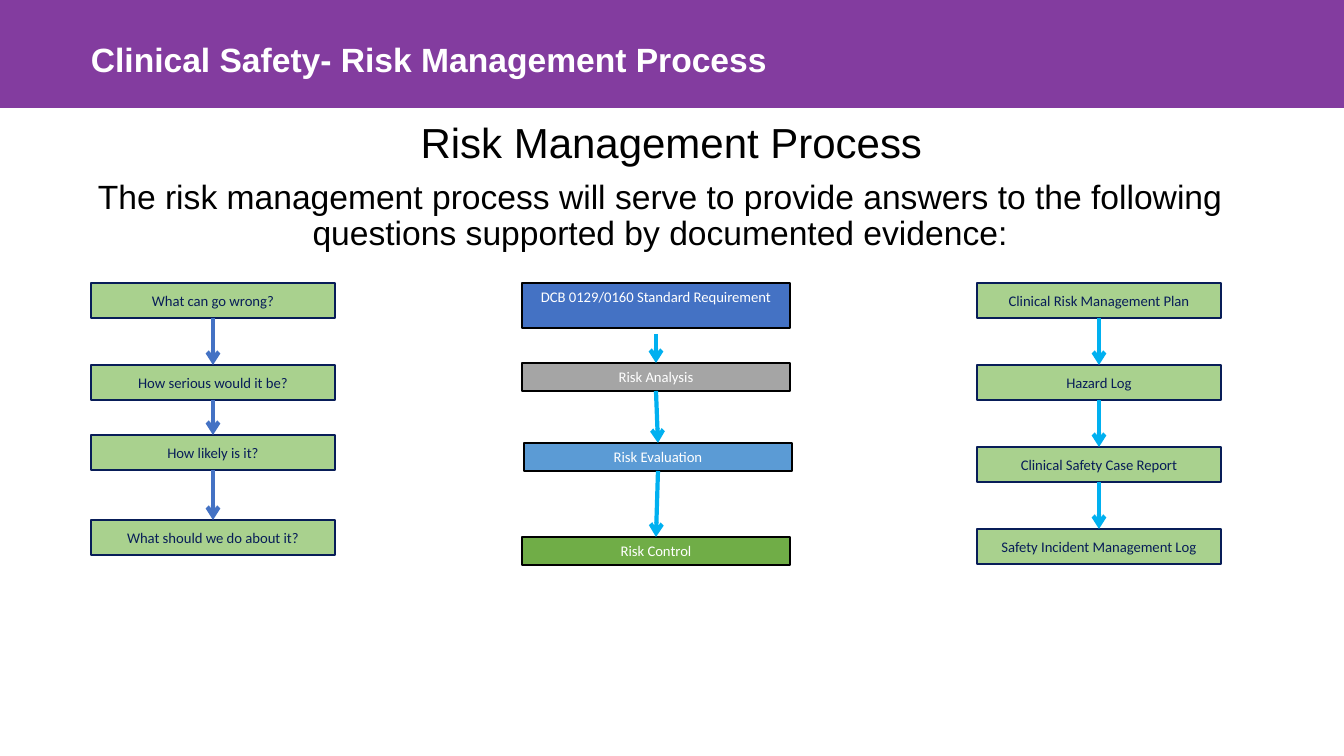
from lxml import etree
from pptx import Presentation
from pptx.dml.color import RGBColor
from pptx.enum.shapes import MSO_CONNECTOR, MSO_SHAPE
from pptx.enum.text import MSO_ANCHOR, MSO_AUTO_SIZE, PP_ALIGN
from pptx.oxml.ns import qn
from pptx.util import Pt

EMU_PER_PX = 914400 / 100.8
RECTANGLE = MSO_SHAPE.RECTANGLE
STRAIGHT = MSO_CONNECTOR.STRAIGHT
TOP, MIDDLE = MSO_ANCHOR.TOP, MSO_ANCHOR.MIDDLE
CENTER = PP_ALIGN.CENTER
NO_AUTOFIT, GROW = MSO_AUTO_SIZE.NONE, MSO_AUTO_SIZE.SHAPE_TO_FIT_TEXT
BOTTOM_SITE, TOP_SITE = 2, 0

WHITE, BLACK, NAVY = "FFFFFF", "000000", "081D58"
PURPLE, GREEN, BLUE, CYAN = "833C9F", "A9D18E", "4472C4", "00B0F0"


def px(*lengths):
    """Turn pixel lengths into a list of EMU."""
    return [round(length * EMU_PER_PX) for length in lengths]


def color(hex_string):
    return RGBColor.from_string(hex_string)


presentation = Presentation()
presentation.slide_width, presentation.slide_height = px(1344, 756)
slide = presentation.slides.add_slide(presentation.slide_layouts[1])
shapes = slide.shapes

# Header band
band = shapes.add_shape(RECTANGLE, *px(0, 0, 1344, 108))
band.shadow.inherit = False
band.fill.solid()
band.fill.fore_color.rgb = color(PURPLE)
band.line.fill.background()

header = shapes.add_textbox(*px(81, 34, 1138, 50))
header.text_frame.word_wrap = True
header.text_frame.auto_size = GROW
header.text_frame.text = "Clinical Safety- Risk Management Process"
header_font = header.text_frame.paragraphs[0].runs[0].font
header_font.name, header_font.size, header_font.bold = "Arial", Pt(24), True
header_font.color.rgb = color(WHITE)

# Title and introduction
introduction = (
    "The risk management process will serve to provide answers to the "
    "following questions supported by documented evidence:"
)
placeholders = [
    (shapes.title, "Risk Management Process", (237, 115, 869, 60), 30, MIDDLE),
    (slide.placeholders[1], introduction, (70, 175, 1180, 475), 24, TOP),
]
for placeholder, text, box, size, anchor in placeholders:
    placeholder.left, placeholder.top, placeholder.width, placeholder.height = px(*box)
    frame = placeholder.text_frame
    frame.text = text
    frame.auto_size = NO_AUTOFIT
    frame.vertical_anchor = anchor
    paragraph = frame.paragraphs[0]
    paragraph.alignment = CENTER
    paragraph.line_spacing = 0.9
    paragraph.space_before = Pt(0)
    properties = paragraph._p.get_or_add_pPr()
    properties.set("marL", "0")
    properties.set("indent", "0")
    etree.SubElement(properties, qn("a:buNone"))
    font = paragraph.runs[0].font
    font.name, font.size = "Arial", Pt(size)
    font.color.rgb = color(BLACK)

# Three flows: box width, text and line colours, anchor, arrow colour, boxes
questions = [
    ("What can go wrong?", 91, 283, 35, GREEN),
    ("How serious would it be?", 91, 365, 35, GREEN),
    ("How likely is it?", 91, 435, 35, GREEN),
    ("What should we do about it?", 91, 520, 35, GREEN),
]
STANDARD = "DCB 0129/0160 Standard Requirement"
activities = [
    (STANDARD, 522, 283, 45, BLUE),
    ("Risk Analysis", 522, 363, 28, "A5A5A5"),
    ("Risk Evaluation", 524, 443, 28, "5B9BD5"),
    ("Risk Control", 522, 537, 28, "70AD47"),
]
document_names = [
    "Clinical Risk Management Plan",
    "Hazard Log",
    "Clinical Safety Case Report",
    "Safety Incident Management Log",
]
documents = [
    (name, 977, 283 + 82 * row, 35, GREEN) for row, name in enumerate(document_names)
]
flows = [
    (244, NAVY, NAVY, MIDDLE, BLUE, questions),
    (268, WHITE, BLACK, TOP, CYAN, activities),
    (244, NAVY, NAVY, MIDDLE, CYAN, documents),
]
for width, text_color, line_color, anchor, arrow_color, boxes in flows:
    steps = []
    for text, left, top, height, fill in boxes:
        step = shapes.add_shape(RECTANGLE, *px(left, top, width, height))
        step.shadow.inherit = False
        step.fill.solid()
        step.fill.fore_color.rgb = color(fill)
        step.line.color.rgb = color(line_color)
        step.line.width = Pt(1.25)
        frame = step.text_frame
        frame.text = text
        frame.word_wrap = True
        frame.vertical_anchor = anchor
        frame.paragraphs[0].alignment = CENTER
        font = frame.paragraphs[0].runs[0].font
        font.name, font.size = "Calibri", Pt(10.5)
        font.color.rgb = color(text_color)
        steps.append(step)

    for upper, lower in zip(steps, steps[1:]):
        arrow = shapes.add_connector(STRAIGHT, *px(656, 334, 656, 363))
        # The arrow below the standard starts a little under its box
        if upper.text_frame.text != STANDARD:
            arrow.begin_connect(upper, BOTTOM_SITE)
        arrow.end_connect(lower, TOP_SITE)
        arrow.line.color.rgb = color(arrow_color)
        arrow.line.width = Pt(3)
        etree.SubElement(arrow.line._get_or_add_ln(), qn("a:tailEnd"), type="arrow")
        etree.SubElement(arrow._element.spPr, qn("a:effectLst"))

presentation.save("out.pptx")
